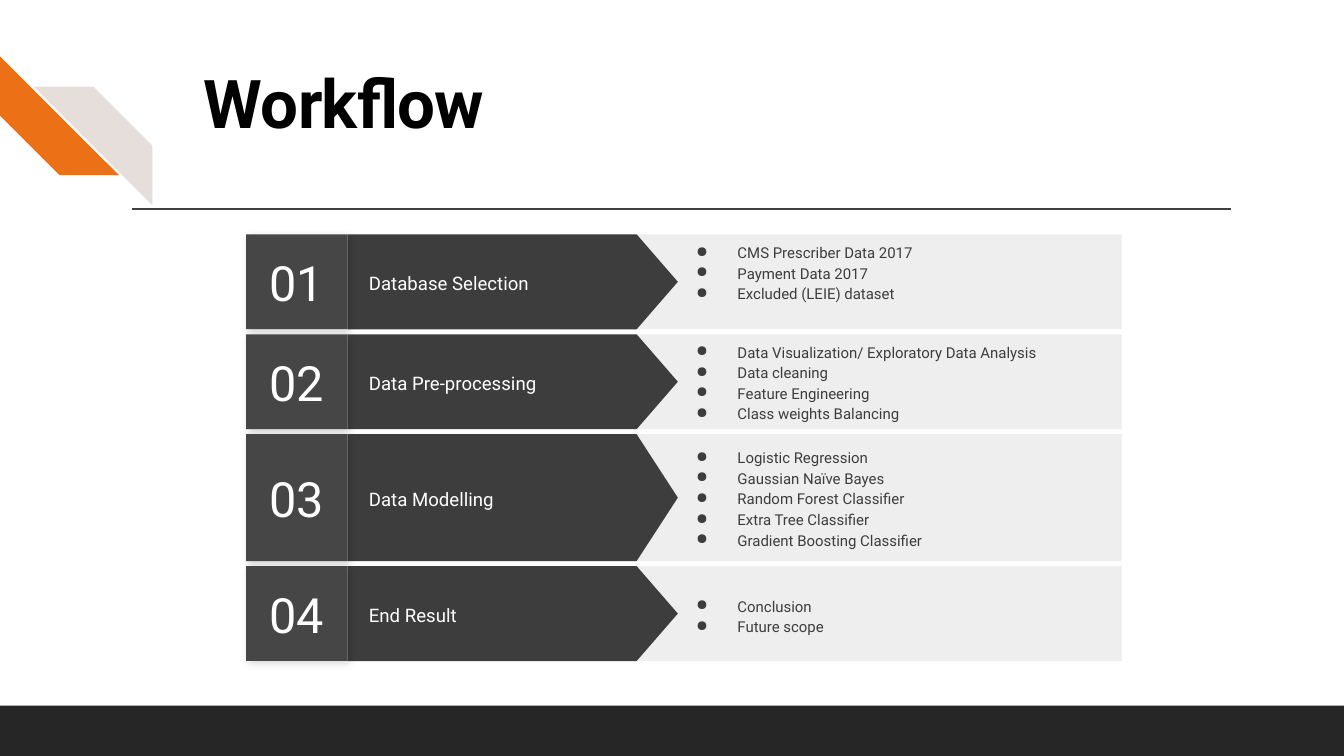
from lxml.etree import SubElement
from pptx import Presentation
from pptx.dml.color import RGBColor
from pptx.enum.shapes import MSO_CONNECTOR as Connector, MSO_SHAPE as Shape
from pptx.enum.text import MSO_ANCHOR as Anchor, MSO_AUTO_SIZE as AutoSize, PP_ALIGN as Align
from pptx.oxml import parse_xml
from pptx.oxml.ns import nsdecls, qn
from pptx.util import Inches, Pt

COLUMNS, ROWS = 160, 90
STEPS = [
    ("Database Selection", 11.3, -1.2,
     ["CMS Prescriber Data 2017", "Payment Data 2017", "Excluded (LEIE) dataset"]),
    ("Data Pre-processing", 11.3, 0,
     ["Data Visualization/ Exploratory Data Analysis", "Data cleaning",
      "Feature Engineering", "Class weights Balancing"]),
    ("Data Modelling", 15.1, 0,
     ["Logistic Regression", "Gaussian Naïve Bayes", "Random Forest Classifier",
      "Extra Tree Classifier", "Gradient Boosting Classifier"]),
    ("End Result", 11.3, 0.2, ["Conclusion", "Future scope"]),
]


def color(value):
    return RGBColor.from_string(value)


class Page:
    font = "Roboto"
    dark = "3D3D3D"
    white = "FFFFFF"

    def __init__(self, deck):
        self.slide = deck.slides.add_slide(deck.slide_layouts[5])
        self.cell_width = deck.slide_width / COLUMNS
        self.cell_height = deck.slide_height / ROWS

    def place(self, left, top, width, height):
        return (round(left * self.cell_width), round(top * self.cell_height),
                round(width * self.cell_width), round(height * self.cell_height))

    def fill_text(self, box, lines, size, fill, align=Align.LEFT, spacing=1.0,
                  anchor=Anchor.MIDDLE, left=0.13, edge=0.0, bold=False):
        frame = box.text_frame
        frame.word_wrap = True
        frame.auto_size = AutoSize.NONE
        frame.vertical_anchor = anchor
        frame.margin_left, frame.margin_right = Inches(left), Inches(0.13)
        frame.margin_top = frame.margin_bottom = Inches(edge)
        frame.text = "\n".join(lines)
        for para in frame.paragraphs:
            para.alignment = align
            para.line_spacing = spacing
            para.font.name = self.font
            para.font.size = Pt(size)
            para.font.bold = bold
            para.font.color.rgb = color(fill)
        return frame

    def title(self, text, *area):
        box = self.slide.shapes.title
        box.left, box.top, box.width, box.height = self.place(*area)
        frame = self.fill_text(box, [text], 48, "000000", spacing=0.9,
                               anchor=Anchor.TOP, edge=0.13, bold=True)
        frame.paragraphs[0].runs[0].font._element.set("spc", "-50")

    def shape(self, kind, fill, *area, rotation=0):
        box = self.slide.shapes.add_shape(kind, *self.place(*area))
        box.shadow.inherit = False
        box.fill.solid()
        box.fill.fore_color.rgb = color(fill)
        box.line.fill.background()
        box.rotation = rotation
        return box

    def rule(self, left, top, width):
        x, y, length, _ = self.place(left, top, width, 0)
        line = self.slide.shapes.add_connector(Connector.STRAIGHT, x, y, x + length, y)
        line.line.color.rgb = color("404040")
        line.line.width = Pt(1)
        SubElement(line._element.spPr, qn("a:effectLst"))

    def number(self, text, *area):
        box = self.shape(Shape.RECTANGLE, "464646", *area)
        self.fill_text(box, [text], 34.7, self.white, align=Align.CENTER)
        box._element.spPr.find(qn("a:effectLst")).append(parse_xml(
            f'<a:outerShdw {nsdecls("a")} blurRad="{Pt(5.6)}" dist="{Pt(2.2)}" dir="2700000">'
            '<a:srgbClr val="000000"><a:alpha val="17000"/></a:srgbClr></a:outerShdw>'))

    def arrow(self, text, left, top, width, height, tip):
        box = self.shape(Shape.PENTAGON, self.dark, left, top, width, height)
        box.adjustments[0] = tip / height
        self.fill_text(box, [text], 13.3, self.white, spacing=1.15, left=0.21)

    def bullets(self, items, *area):
        box = self.slide.shapes.add_textbox(*self.place(*area))
        frame = self.fill_text(box, items, 10.7, self.dark, spacing=1.15)
        for para in frame.paragraphs:
            properties = para._p.get_or_add_pPr()
            properties.set("marL", str(Inches(0.67)))
            properties.set("indent", str(Inches(-0.41)))
            mark = parse_xml(f'<a:buChar {nsdecls("a")} char="●"/>')
            properties.insert_element_before(mark, "a:tabLst", "a:defRPr", "a:extLst")

    def step(self, index, top, height, label, shift, items):
        self.shape(Shape.RECTANGLE, "EEEEEE", 66.7, top, 66.85, height)
        self.arrow(label, 41.4, top, 39.3, height, tip=4.9)
        self.number(f"{index:02d}", 29.3, top, 12.1, height)
        self.bullets(items, 78.2, top + shift, 52, height)


def main():
    deck = Presentation()
    deck.slide_width, deck.slide_height = Inches(13.33), Inches(7.5)
    page = Page(deck)
    page.shape(Shape.RECTANGLE, "262626", 0, 84, COLUMNS, 6)
    page.rule(15.7, 24.9, 130.8)
    page.shape(Shape.DIAGONAL_STRIPE, "EC7016", 0, 6.7, 14.15, 14.15, rotation=270)
    page.shape(Shape.DIAGONAL_STRIPE, "E5DEDB", 4, 10.3, 14.15, 14.15, rotation=90)
    page.title("Workflow", 22.7, 6.8, 123.1, 16)
    top = 27.9
    for index, (label, height, shift, items) in enumerate(STEPS, 1):
        page.step(index, top, height, label, shift, items)
        top += height + 0.6
    deck.save("out.pptx")


if __name__ == "__main__":
    main()
